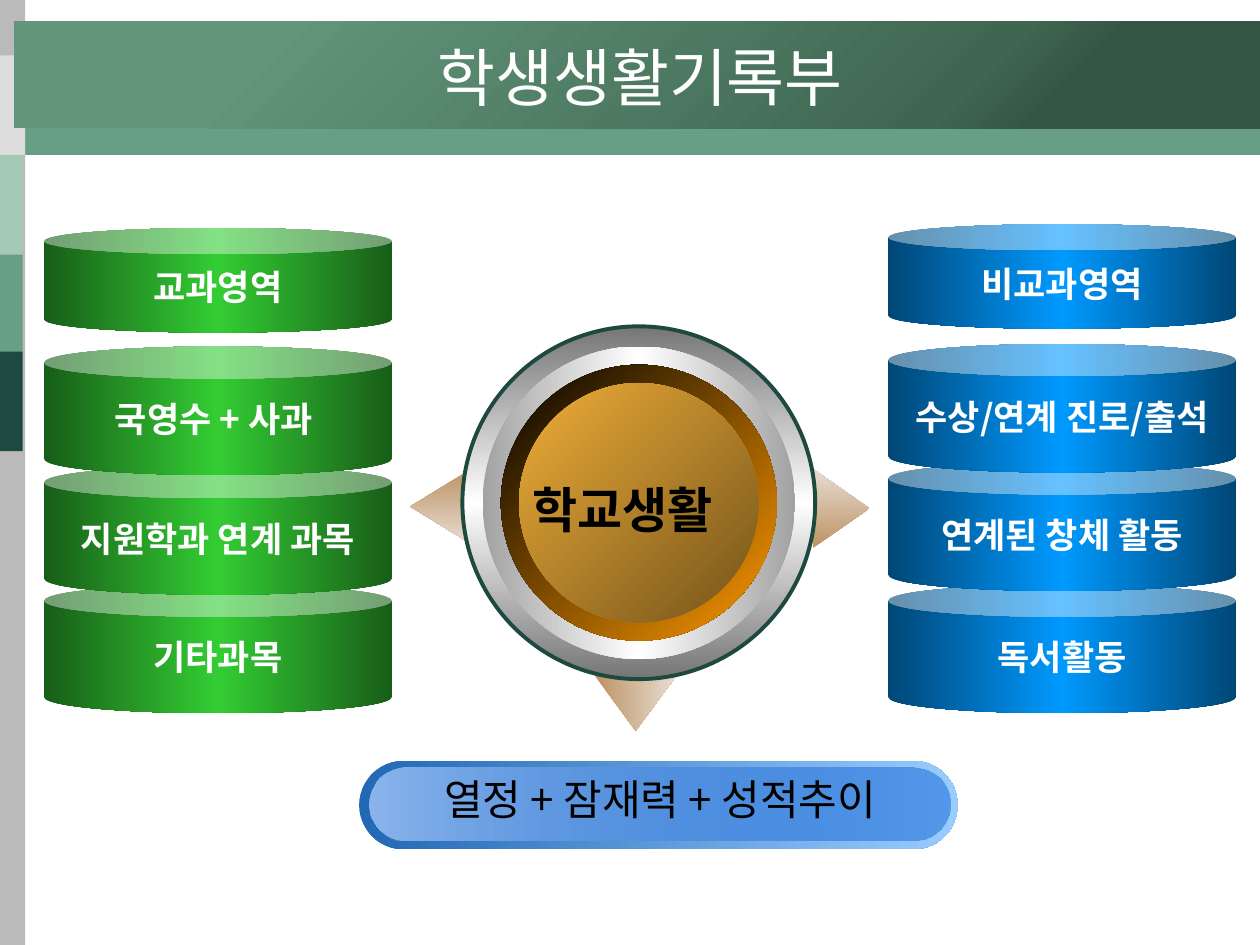
from dataclasses import dataclass

from lxml import etree
from pptx import Presentation
from pptx.dml.color import RGBColor
from pptx.enum.shapes import MSO_SHAPE
from pptx.enum.text import MSO_ANCHOR, MSO_AUTO_SIZE, PP_ALIGN
from pptx.oxml.ns import qn
from pptx.util import Inches, Pt

RECT, OVAL, CAN = MSO_SHAPE.RECTANGLE, MSO_SHAPE.OVAL, MSO_SHAPE.CAN
ARROW, PILL = MSO_SHAPE.UP_ARROW, MSO_SHAPE.ROUNDED_RECTANGLE
CENTER, LEFT = PP_ALIGN.CENTER, PP_ALIGN.LEFT
MIDDLE, TOP = MSO_ANCHOR.MIDDLE, MSO_ANCHOR.TOP
GROW = MSO_AUTO_SIZE.SHAPE_TO_FIT_TEXT


def mirrored(edge, middle):
    return [(0, edge), (50, middle), (100, edge)]


@dataclass(frozen=True)
class Theme:
    font: str = "Noto Sans CJK KR"
    title_size: int = 36
    center_size: int = 28
    summary_size: int = 24
    can_size: int = 20
    white: str = "FFFFFF"
    black: str = "000000"
    shadow: str = "808080"
    gray: str = "BABABA"
    light_gray: str = "DDDDDD"
    mint: str = "A2CAB4"
    sage: str = "669E86"
    pine: str = "1D4940"
    title_bar: tuple = ((20, "629579"), (75, "3F6651"), (83, "355644"))
    arrow: tuple = ((0, "BC9362"), (100, "E8DDD4"))
    green: tuple = tuple(mirrored("185E18", "33CC33"))
    blue: tuple = tuple(mirrored("004776", "0099FF"))
    rim: tuple = tuple(mirrored("767676", "FFFFFF"))
    ring: tuple = tuple(mirrored("A2A2A2", "FFFFFF"))
    bezel: tuple = ((0, "000000"), (100, "FF9900"))
    face: tuple = ((0, "EEAD38"), (100, "74541B"))
    pill_edge: tuple = ((0, "2268B4"), (100, "99CCFF"))
    pill_face: tuple = ((0, "8BB5EC"), (100, "1166D7", 50))


T = Theme()


def set_gradient(sp, stops, angle):
    """Each stop is position in percent, colour and optional opacity."""
    sp.fill.gradient()
    sp.fill.gradient_angle = -angle % 360
    gs_list = sp._element.spPr.find(".//" + qn("a:gsLst"))
    for old in list(gs_list):
        gs_list.remove(old)
    for pos, color, *alpha in stops:
        gs = etree.SubElement(gs_list, qn("a:gs"), pos=str(pos * 1000))
        clr = etree.SubElement(gs, qn("a:srgbClr"), val=color)
        if alpha:
            etree.SubElement(clr, qn("a:alpha"), val=str(alpha[0] * 1000))


def add_shape(shapes, kind, box, fill, angle=0, adj=()):
    sp = shapes.add_shape(kind, *map(Inches, box))
    sp.shadow.inherit = False
    sp.line.fill.background()
    if isinstance(fill, str):
        sp.fill.solid()
        sp.fill.fore_color.rgb = RGBColor.from_string(fill)
    else:
        set_gradient(sp, fill, angle)
    for i, value in enumerate(adj):
        sp.adjustments[i] = value
    return sp


def set_text(sp, text, size, color, bold=False, align=CENTER, anchor=MIDDLE, wrap=True):
    tf = sp.text_frame
    tf.text = text
    tf.word_wrap = wrap
    tf.vertical_anchor = anchor
    p = tf.paragraphs[0]
    p.alignment = align
    r = p.runs[0]
    r.font.size = Pt(size)
    r.font.bold = bold
    r.font.color.rgb = RGBColor.from_string(color)
    r.font.name = T.font
    etree.SubElement(r.font._element, qn("a:ea"), typeface=T.font)
    return r


def add_text(shapes, box, *args, grow=False, **kwargs):
    sp = shapes.add_textbox(*map(Inches, box))
    r = set_text(sp, *args, **kwargs)
    if grow:
        sp.text_frame.auto_size = GROW
    return r


def add_text_shadow(r):
    effects = etree.Element(qn("a:effectLst"))
    shadow = etree.SubElement(effects, qn("a:outerShdw"), dist="35921", dir="2700000")
    etree.SubElement(shadow, qn("a:srgbClr"), val=T.shadow)
    r.font._element.find(qn("a:latin")).addprevious(effects)


def add_arrow(shapes, box, rotation):
    sp = add_shape(shapes, ARROW, box, T.arrow, adj=(0.52, 1))
    sp.rotation = rotation
    sp._element.spPr.find(qn("a:xfrm")).set("flipH", "1")


def add_can(shapes, left, top, height, text, fill):
    sp = add_shape(shapes, CAN, (left, top, 2.76, height), fill, adj=(0.25,))
    set_text(sp, text, T.can_size, T.white, bold=True, wrap=False)


def add_can_column(shapes, left, fill, header, items):
    add_can(shapes, left, *header, fill)
    # Lower cans first, so that each one sits on the next
    for top, text in reversed(items):
        add_can(shapes, left, top, 1.02, text, fill)


def add_frame(shapes):
    add_shape(shapes, RECT, (0, 0.44, 10, 0.79), T.sage)
    add_shape(shapes, RECT, (-0.01, 0, 0.21, 7.5), T.gray)
    add_shape(shapes, RECT, (0, 0.44, 0.2, 0.79), T.light_gray)
    for top, color in ((1.23, T.mint), (2.02, T.sage), (2.79, T.pine)):
        add_shape(shapes, RECT, (-0.02, top, 0.2, 0.79), color)
    add_shape(shapes, RECT, (0.11, 0.17, 9.89, 0.85), T.title_bar, 45)


def add_wheel(shapes):
    add_arrow(shapes, (4.72, 5.36, 0.65, 0.44), 180)
    add_arrow(shapes, (3.2, 3.78, 0.59, 0.48), 270)
    add_arrow(shapes, (6.36, 3.81, 0.63, 0.45), 90)
    # Concentric discs, from the outside in
    cx, cy = 5.07, 3.99
    discs = [(2.8, T.rim, 90), (2.48, T.ring, 0), (2.19, T.bezel, 45), (1.9, T.face, 45)]
    for d, fill, angle in discs:
        sp = add_shape(shapes, OVAL, (cx - d / 2, cy - d / 2, d, d), fill, angle)
        if fill == T.rim:
            sp.line.color.rgb = RGBColor.from_string(T.pine)
            sp.line.width = Pt(2.25)
    add_text(shapes, (4.13, 3.76, 1.74, 0.57), "학교생활", T.center_size, T.black,
             bold=True, align=LEFT, anchor=TOP, wrap=False, grow=True)


def add_summary(shapes):
    add_shape(shapes, PILL, (2.85, 6.04, 4.75, 0.7), T.pill_edge, adj=(0.5,))
    add_shape(shapes, PILL, (2.93, 6.09, 4.61, 0.58), T.pill_face, adj=(0.5,))
    r = add_text(shapes, (2.95, 6.09, 4.58, 0.5), "열정 + 잠재력 + 성적추이",
                 T.summary_size, T.black, anchor=TOP, grow=True)
    add_text_shadow(r)


def main():
    prs = Presentation()
    prs.slide_width, prs.slide_height = Inches(10), Inches(7.5)
    s = prs.slides.add_slide(prs.slide_layouts[6])

    # Background bands, wheel and summary bar
    add_frame(s.shapes)
    add_wheel(s.shapes.add_group_shape().shapes)
    add_summary(s.shapes.add_group_shape().shapes)

    # Title
    add_text(s.shapes, (0.16, 0.21, 9.84, 0.79), "학생생활기록부", T.title_size, T.white)

    # Subject and non-subject columns
    add_can_column(s.shapes, 0.35, T.green, (1.81, 0.83, "교과영역"),
                   [(2.75, "국영수 + 사과 "), (3.7, "지원학과 연계 과목"), (4.64, "기타과목")])
    add_can_column(s.shapes, 7.05, T.blue, (1.78, 0.83, "비교과영역"),
                   [(2.73, "수상/연계 진로/출석"), (3.67, "연계된 창체 활동"), (4.64, "독서활동")])

    prs.save("out.pptx")


if __name__ == "__main__":
    main()
